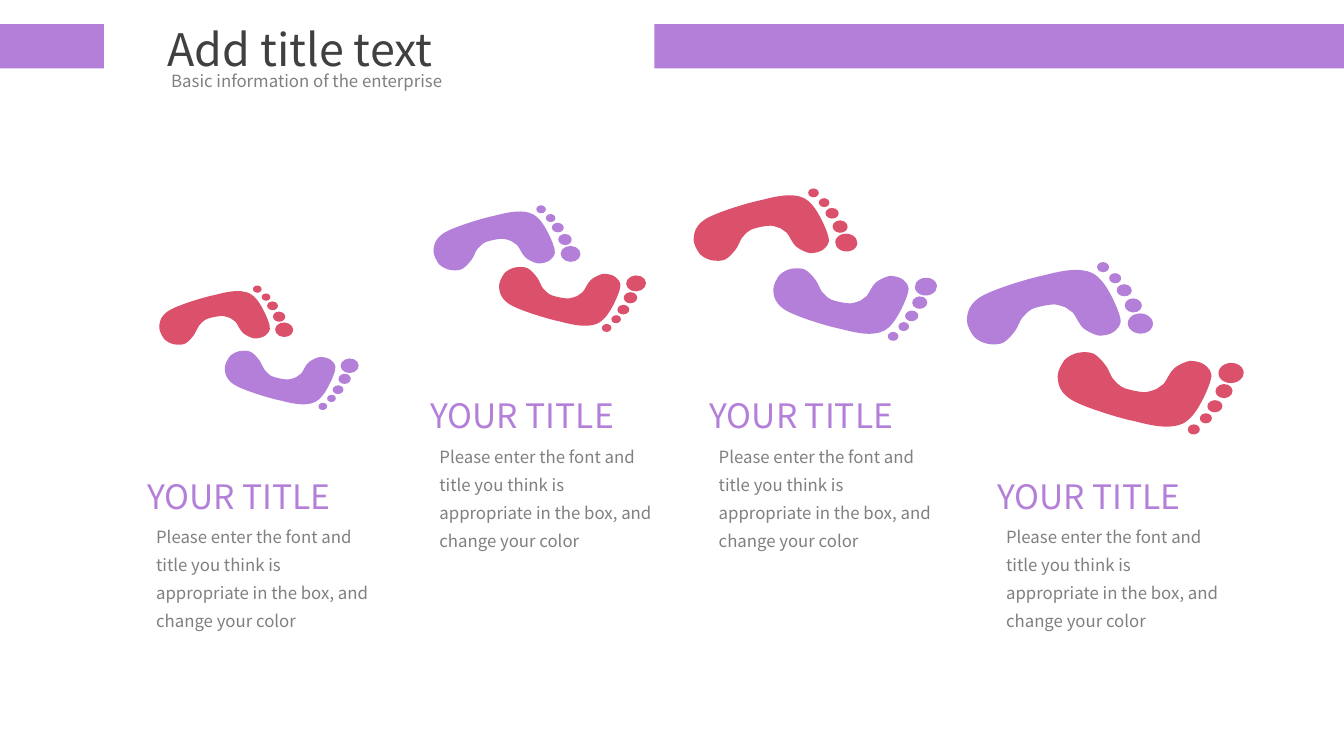
from dataclasses import dataclass

from pptx import Presentation
from pptx.dml.color import RGBColor
from pptx.enum.shapes import MSO_SHAPE as Preset
from pptx.enum.text import MSO_ANCHOR as Anchor, MSO_AUTO_SIZE as AutoSize, PP_ALIGN as Align
from pptx.oxml.ns import qn
from pptx.util import Inches, Pt


@dataclass(frozen=True)
class Theme:
    font: str = "Noto Sans CJK SC"
    purple: str = "B47FD9"
    red: str = "DB516B"
    dark: str = "404040"
    gray: str = "808080"
    title_size: int = 32
    heading_size: int = 24
    body_size: int = 12
    body_leading: int = 20


theme = Theme()

SOLE_START = (0.98, 0.37)
SOLE_CURVES = [
    (1.01, 0.39), (1.02, 0.39), (1.05, 0.42),
    (1.08, 0.45), (1.11, 0.54), (1.16, 0.58),
    (1.20, 0.61), (1.26, 0.64), (1.31, 0.65),
    (1.36, 0.65), (1.42, 0.64), (1.46, 0.61),
    (1.49, 0.58), (1.54, 0.55), (1.52, 0.47),
    (1.50, 0.38), (1.41, 0.19), (1.34, 0.11),
    (1.28, 0.04), (1.23, 0.01), (1.13, 0.00),
    (1.04, -0.01), (0.92, 0.01), (0.77, 0.05),
    (0.62, 0.08), (0.37, 0.16), (0.25, 0.21),
    (0.13, 0.26), (0.09, 0.29), (0.05, 0.34),
    (0.01, 0.39), (0.00, 0.45), (0.00, 0.50),
    (0.00, 0.55), (0.04, 0.62), (0.07, 0.66),
    (0.11, 0.70), (0.16, 0.72), (0.20, 0.73),
    (0.25, 0.74), (0.32, 0.74), (0.36, 0.72),
    (0.41, 0.69), (0.45, 0.64), (0.48, 0.60),
    (0.51, 0.56), (0.52, 0.51), (0.55, 0.47),
    (0.58, 0.44), (0.61, 0.40), (0.66, 0.38),
    (0.72, 0.36), (0.81, 0.34), (0.87, 0.34),
    (0.94, 0.35), (0.94, 0.36), SOLE_START,
]
TOES = [
    (1.72, 0.53, 0.20, 0.25),
    (1.65, 0.35, 0.14, 0.17),
    (1.56, 0.20, 0.12, 0.15),
    (1.47, 0.08, 0.10, 0.12),
    (1.35, -0.03, 0.10, 0.12),
]
TOE_ANGLE = 92.8


def paint(shape, color):
    shape.shadow.inherit = False
    shape.fill.solid()
    shape.fill.fore_color.rgb = RGBColor.from_string(color)
    shape.line.fill.background()


def write(shape, box, text, size, color, align=Align.LEFT, leading=None):
    shape.left, shape.top, shape.width, shape.height = map(Inches, box)
    frame = shape.text_frame
    frame.word_wrap = True
    frame.auto_size = AutoSize.NONE
    frame.vertical_anchor = Anchor.TOP
    paragraph = frame.paragraphs[0]
    paragraph.alignment = align
    if leading:
        paragraph.line_spacing = Pt(leading)
    run = paragraph.add_run()
    run.text = text
    run.font.name = theme.font
    run.font.size = Pt(size)
    run.font.color.rgb = RGBColor.from_string(color)


presentation = Presentation()
presentation.slide_width = Inches(13.33)
presentation.slide_height = Inches(7.5)
slide = presentation.slides.add_slide(presentation.slide_layouts[5])
shapes = slide.shapes

write(shapes.title, (1.56, 0.17, 3.97, 0.64), "Add title text",
      theme.title_size, theme.dark, Align.JUSTIFY)
write(shapes.add_textbox(0, 0, 0, 0), (1.6, 0.65, 3.84, 0.3),
      "Basic information of the enterprise", theme.body_size, theme.gray, Align.JUSTIFY)

red_first = (theme.red, theme.purple)
purple_first = (theme.purple, theme.red)
footprint_pairs = [
    (1.58, 2.89, 0.72, 0.65, 1.12, red_first),
    (4.30, 2.10, 0.79, 0.65, 1.13, purple_first),
    (6.88, 1.94, 0.88, 0.79, 1.37, red_first),
    (9.59, 2.68, 1.00, 0.90, 1.55, purple_first),
]
for left, top, scale, stride, span, colors in footprint_pairs:
    pair = shapes.add_group_shape()
    feet = [(left, top, 1), (left + stride, top + span, -1)]
    for (foot_x, foot_y, side), color in zip(feet, colors):
        for toe_x, toe_y, toe_width, toe_height in TOES:
            width, height = toe_width * scale, toe_height * scale
            toe = pair.shapes.add_shape(
                Preset.OVAL,
                Inches(foot_x + toe_x * scale - width / 2),
                Inches(foot_y + side * toe_y * scale - height / 2),
                Inches(width), Inches(height))
            toe.rotation = side * TOE_ANGLE
            paint(toe, color)

        start, *points = [
            (Inches(foot_x + x * scale), Inches(foot_y + side * y * scale))
            for x, y in [SOLE_START, *SOLE_CURVES]]
        builder = pair.shapes.build_freeform(*start)
        builder.add_line_segments(points, close=True)
        sole = builder.convert_to_shape()
        segments = list(sole.element.iter(qn("a:lnTo")))
        for curve, second, third in zip(segments[::3], segments[1::3], segments[2::3]):
            curve.tag = qn("a:cubicBezTo")
            for segment in (second, third):
                segment.getparent().remove(segment)
                curve.append(segment[0])
        paint(sole, color)

for left, top in [(1.36, 4.67), (4.17, 3.87), (6.94, 3.87), (9.79, 4.67)]:
    write(shapes.add_textbox(0, 0, 0, 0), (left, top, 2.31, 0.5),
          "YOUR TITLE", theme.heading_size, theme.purple)
    write(shapes.add_textbox(0, 0, 0, 0), (left + 0.09, top + 0.43, 2.31, 1.19),
          "Please enter the font and title you think is appropriate in the box, "
          "and change your color",
          theme.body_size, theme.gray, leading=theme.body_leading)

for left, width in [(0, 1.03), (6.49, 6.84)]:
    bar = shapes.add_shape(Preset.RECTANGLE, Inches(left), Inches(0.24),
                           Inches(width), Inches(0.44))
    paint(bar, theme.purple)

presentation.save("out.pptx")
